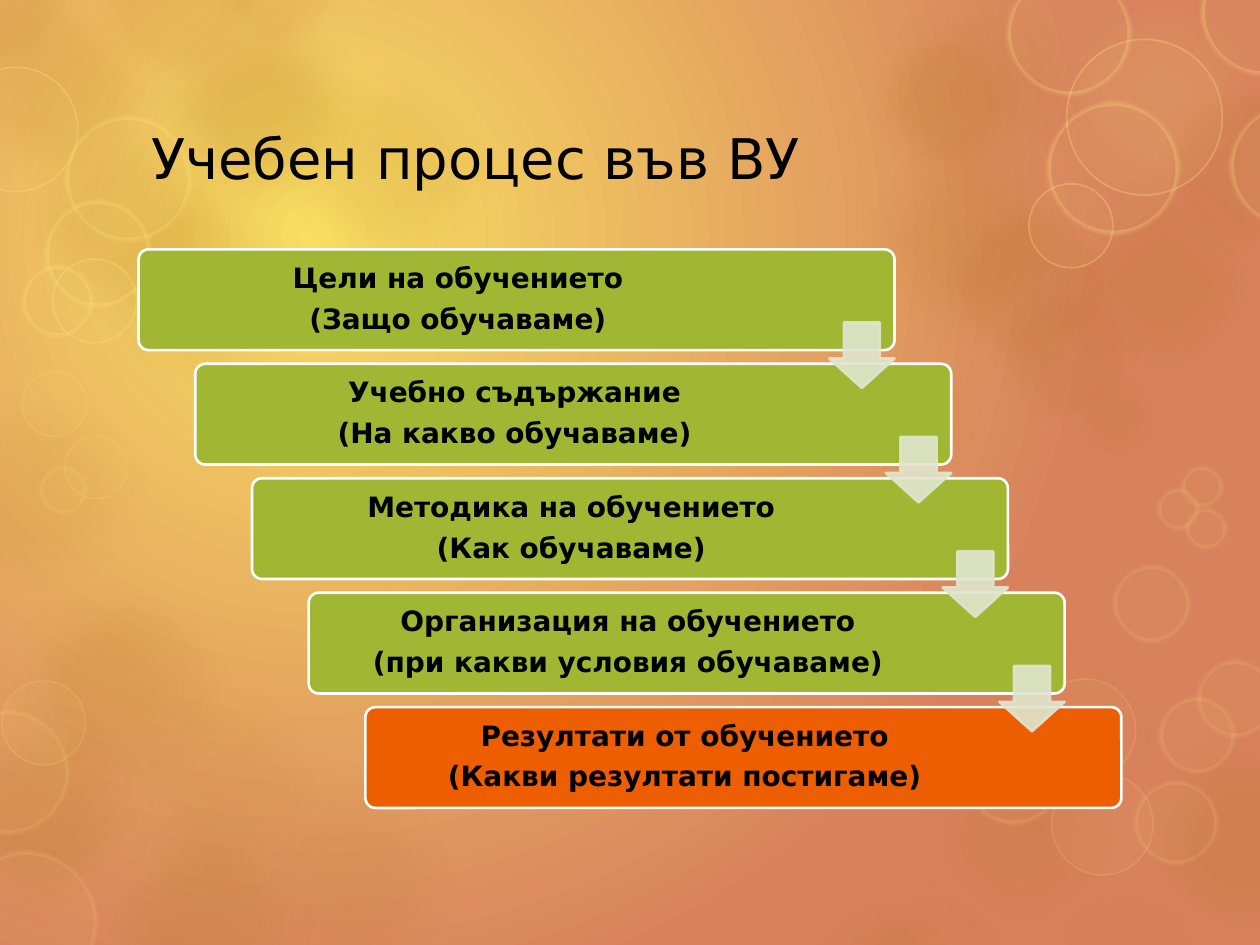
from pptx import Presentation
from pptx.dml.color import RGBColor
from pptx.enum.shapes import MSO_SHAPE as Shape
from pptx.enum.text import MSO_ANCHOR as Anchor, PP_ALIGN as Align
from pptx.oxml import parse_xml
from pptx.oxml.ns import nsdecls, qn
from pptx.util import Pt

WIDTH, HEIGHT = 720, 540
FONT = "DejaVu Sans"
BLACK, WHITE = "000000", "FFFFFF"
BROWN, TAN, YELLOW = "AE6D11", "F1BD74", "FFE281"
GREEN, ORANGE, PALE = "A1B633", "ED5E00", "E0E5CE"

TITLE = "Учебен процес във ВУ"
STEPS = [
    ("Цели на обучението", "(Защо обучаваме)", GREEN),
    ("Учебно съдържание", "(На какво обучаваме)", GREEN),
    ("Методика на обучението", "(Как обучаваме)", GREEN),
    ("Организация на обучението", "(при какви условия обучаваме)", GREEN),
    ("Резултати от обучението", "(Какви резултати постигаме)", ORANGE),
]

# Blurred spots: centre x, centre y, opacity in percent
SPOT_SIZE = 150
SPOTS = [
    (57, 393, 8), (116, 162, 10), (223, 98, 10), (116, 526, 16), (35, 52, 14),
    (148, 62, 20), (75, 127, 15), (557, 54, 10), (665, 162, 15), (709, 480, 16),
    (600, 419, 5), (26, 465, 16), (131, 453, 8), (557, 137, 15), (584, 480, 10),
    (200, 505, 8), (25, 279, 8),
]

# Each group: fill, fill opacity, line, line width, line opacity, soft edge,
# then circles as centre x, centre y, diameter
CIRCLE_GROUPS = [
    (YELLOW, 10, None, 0, 0, 25, [(665, 52, 150)]),
    (BROWN, 10, None, 0, 0, 25, [(534, 237, 96)]),
    (BROWN, 10, TAN, 14, 6, 12, [
        (711, 96, 99), (541, 58, 82), (589, 162, 96), (609, 202, 82),
        (638, 238, 57), (101, 0, 94), (159, -13, 82), (0, -1, 82)]),
    (BROWN, 6, TAN, 14, 4, 12, [
        (77, 396, 110), (500, 556, 90), (531, 554, 98), (644, 553, 96)]),
    (YELLOW, 5, YELLOW, 1, 15, 0, [
        (25, 413, 48), (630, 471, 58), (620, 417, 58), (31, 231, 37), (55, 267, 36)]),
    (YELLOW, 5, YELLOW, 5, 15, 2.5, [
        (15, 527, 81), (4, 441, 71), (579, 442, 58), (672, 470, 48), (658, 345, 44),
        (684, 420, 44), (706, 399, 44), (687, 278, 24), (673, 291, 24),
        (689, 302, 24), (36, 280, 28)]),
    (YELLOW, 5, YELLOW, 1, 30, 0, [
        (9, 74, 71), (54, 172, 48), (654, 67, 89), (612, 129, 48)]),
    (YELLOW, 5, YELLOW, 5, 30, 2.5, [
        (73, 102, 72), (56, 145, 61), (33, 172, 41), (611, 19, 71), (722, 7, 72),
        (738, 95, 71), (636, 96, 76)]),
]


def rgb(color):
    return RGBColor.from_string(color)


def paint(shape, fill, fill_alpha=100, line=None, width=0, line_alpha=100, soft=0):
    """Set fill, line, opacities in percent and soft edge; drop the shadow."""
    shape.fill.solid()
    shape.fill.fore_color.rgb = rgb(fill)
    if line:
        shape.line.color.rgb = rgb(line)
        shape.line.width = Pt(width)
    else:
        shape.line.fill.background()
    properties = shape._element.spPr
    for color, alpha in zip(properties.iter(qn("a:srgbClr")), (fill_alpha, line_alpha)):
        if alpha < 100:
            color.append(parse_xml(f'<a:alpha {nsdecls("a")} val="{alpha * 1000}"/>'))
    shape.shadow.inherit = False
    if soft:
        properties.find(qn("a:effectLst")).append(
            parse_xml(f'<a:softEdge {nsdecls("a")} rad="{Pt(soft)}"/>'))


def add_circle(shapes, x, y, diameter):
    radius = diameter / 2
    return shapes.add_shape(Shape.OVAL, Pt(x - radius), Pt(y - radius),
                            Pt(diameter), Pt(diameter))


def set_background(slide):
    fill = slide.background.fill
    fill.gradient()
    for stop, color in zip(fill.gradient_stops, ("F8DD62", "D8825D")):
        stop.color.rgb = rgb(color)
    linear = next(slide._element.iter(qn("a:lin")))
    linear.getparent().replace(linear, parse_xml(
        f'<a:path {nsdecls("a")} path="circle">'
        '<a:fillToRect l="50000" t="50000" r="100000" b="100000"/></a:path>'))


def add_decoration(shapes):
    for x, y, alpha in SPOTS:
        paint(add_circle(shapes, x, y, SPOT_SIZE), BROWN, alpha, soft=25)
    for *style, circles in CIRCLE_GROUPS:
        for circle in circles:
            paint(add_circle(shapes, *circle), *style)


def format_font(paragraph, size, bold=False):
    font = paragraph.font
    font.name, font.size, font.bold = FONT, Pt(size), bold
    font.color.rgb = rgb(BLACK)


def set_title(slide):
    title = slide.shapes.title
    slide.shapes._spTree.append(title._element)
    title.left, title.top, title.width, title.height = Pt(79.2), Pt(53.3), Pt(561), Pt(72.7)
    title.text_frame.text = TITLE
    title.text_frame.vertical_anchor = Anchor.MIDDLE
    title.text_frame.paragraphs[0].alignment = Align.LEFT
    format_font(title.text_frame.paragraphs[0], 32)


def add_staircase(shapes):
    left, top, width, height = 79.2, 142.5, 432, 57.6
    shift_x, shift_y = 32.4, 65.4
    arrow_size, arrow_drop = 37.4, 41.8
    corners = [(left + i * shift_x, top + i * shift_y) for i in range(len(STEPS))]

    for (x, y), (name, question, color) in zip(corners, STEPS):
        box = shapes.add_shape(Shape.ROUNDED_RECTANGLE, Pt(x), Pt(y), Pt(width), Pt(height))
        box.adjustments[0] = 0.1
        paint(box, color, line=WHITE, width=1.5)
        frame = box.text_frame
        frame.word_wrap = True
        frame.vertical_anchor = Anchor.MIDDLE
        frame.margin_left, frame.margin_right = Pt(5), Pt(72)
        frame.margin_top = frame.margin_bottom = Pt(5)
        frame.text = f"{name}\n{question}"
        for paragraph in frame.paragraphs:
            paragraph.alignment = Align.CENTER
            paragraph.line_spacing = 0.9
            paragraph.space_after = Pt(6)
            format_font(paragraph, 16, bold=True)

    for x, y in corners[:-1]:
        arrow = shapes.add_shape(Shape.DOWN_ARROW, Pt(x + width - arrow_size),
                                 Pt(y + arrow_drop), Pt(arrow_size), Pt(arrow_size))
        arrow.adjustments[0], arrow.adjustments[1] = 0.55, 0.45
        paint(arrow, PALE, 90, PALE, 1.5, 90)


def main():
    presentation = Presentation()
    presentation.slide_width, presentation.slide_height = Pt(WIDTH), Pt(HEIGHT)
    slide = presentation.slides.add_slide(presentation.slide_layouts[5])
    set_background(slide)
    add_decoration(slide.shapes)
    set_title(slide)
    add_staircase(slide.shapes)
    presentation.save("out.pptx")


if __name__ == "__main__":
    main()
